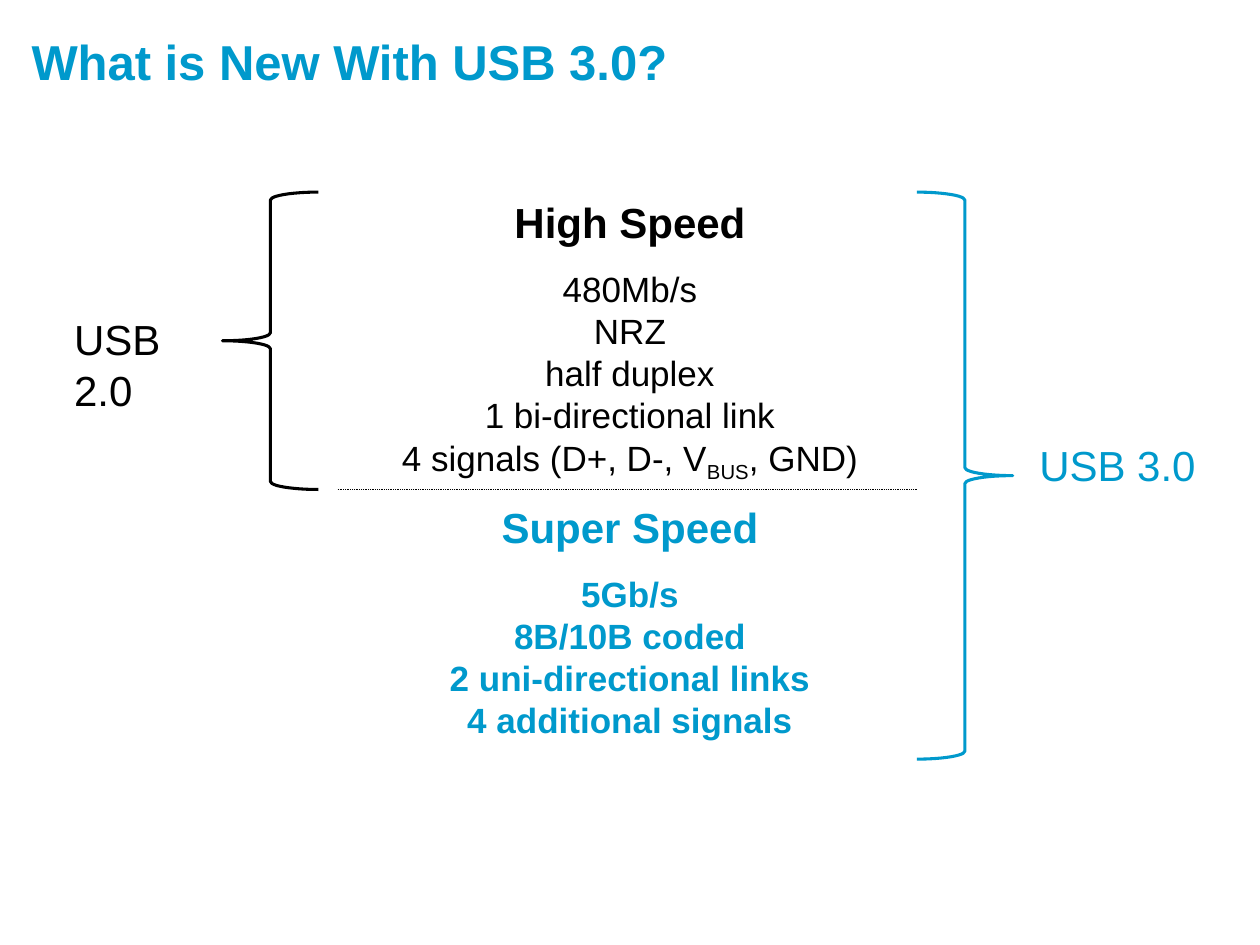
import pptx
import pptx.util
import pptx.dml.color
import pptx.enum.dml
import pptx.enum.shapes
import pptx.enum.text
import pptx.oxml.ns
from lxml import etree

Pt = pptx.util.Pt
Shapes = pptx.enum.shapes.MSO_SHAPE
Align = pptx.enum.text.PP_ALIGN

BLACK, BLUE = "000000", "0099CC"

# Content: each mode has a heading, its lines (lists hold a subscript in the middle)
TITLE = "What is New With USB 3.0?"
MODES = [
    ("High Speed", BLACK, False,
     ["480Mb/s", "NRZ", "half duplex", "1 bi-directional link",
      ["4 signals (D+, D-, V", "BUS", ", GND)"]]),
    ("Super Speed", BLUE, True,
     ["5Gb/s", "8B/10B coded", "2 uni-directional links", "4 additional signals"]),
]
# Label, colour, label box, wrap, brace shape, brace box
VERSIONS = [
    ("USB 2.0", BLACK, (35.3, 175.7, 90, 36), True,
     Shapes.LEFT_BRACE, (127.2, 109.8, 54.7, 169.9)),
    ("USB 3.0", BLUE, (586.8, 247.7, 105.1, 36), False,
     Shapes.RIGHT_BRACE, (524, 109.8, 54.7, 324)),
]
DIVIDER = (193, 279.7, 524.2, 279.7)


def rgb(value):
    return pptx.dml.color.RGBColor.from_string(value)


def add_box(page, bounds, margins=(0, 0), wrap=True):
    frame = page.shapes.add_textbox(*map(Pt, bounds)).text_frame
    frame.word_wrap = wrap
    frame.margin_left = frame.margin_right = Pt(margins[0])
    frame.margin_top = frame.margin_bottom = Pt(margins[1])
    return frame


def write(paragraph, lines, size=24, color=BLACK, bold=False,
          align=Align.LEFT, after=0):
    paragraph.alignment = align
    paragraph.space_after = Pt(after)
    for number, line in enumerate(lines):
        if number:
            paragraph.add_line_break()
        pieces = line if isinstance(line, list) else [line]
        for position, piece in enumerate(pieces):
            span = paragraph.add_run()
            span.text = piece
            span.font.name = "Arial"
            span.font.size = Pt(size)
            span.font.bold = bold
            span.font.color.rgb = rgb(color)
            if position == 1:
                span.font._element.set("baseline", "-25000")


def main():
    deck = pptx.Presentation()
    deck.slide_width, deck.slide_height = Pt(720), Pt(540)
    page = deck.slides.add_slide(deck.slide_layouts[6])

    # Title
    title = add_box(page, (18, 18, 603.4, 78.5))
    write(title.paragraphs[0], [TITLE], size=28, color=BLUE, bold=True)

    # Speed modes, each paragraph followed by half its text size
    body = add_box(page, (18, 112.3, 684, 359.3))
    for number, (heading, color, bold, lines) in enumerate(MODES):
        first = body.add_paragraph() if number else body.paragraphs[0]
        write(first, [heading], color=color, bold=True, align=Align.CENTER, after=12)
        write(body.add_paragraph(), lines, size=20, color=color, bold=bold,
              align=Align.CENTER, after=10)

    # Braces and version labels
    for label, color, bounds, wrap, shape, brace_bounds in VERSIONS:
        brace = page.shapes.add_shape(shape, *map(Pt, brace_bounds))
        brace.shadow.inherit = False
        brace.fill.background()
        brace.line.color.rgb = rgb(color)
        brace.line.width = Pt(1.75)
        box = add_box(page, bounds, margins=(7.2, 3.6), wrap=wrap)
        write(box.paragraphs[0], [label], color=color)

    # Dotted divider
    divider = page.shapes.add_connector(
        pptx.enum.shapes.MSO_CONNECTOR.STRAIGHT, *map(Pt, DIVIDER))
    divider.line.color.rgb = rgb(BLACK)
    divider.line.width = Pt(0.5)
    divider.line.dash_style = pptx.enum.dml.MSO_LINE.ROUND_DOT
    etree.SubElement(divider._element.spPr, pptx.oxml.ns.qn("a:effectLst"))

    deck.save("out.pptx")


if __name__ == "__main__":
    main()
